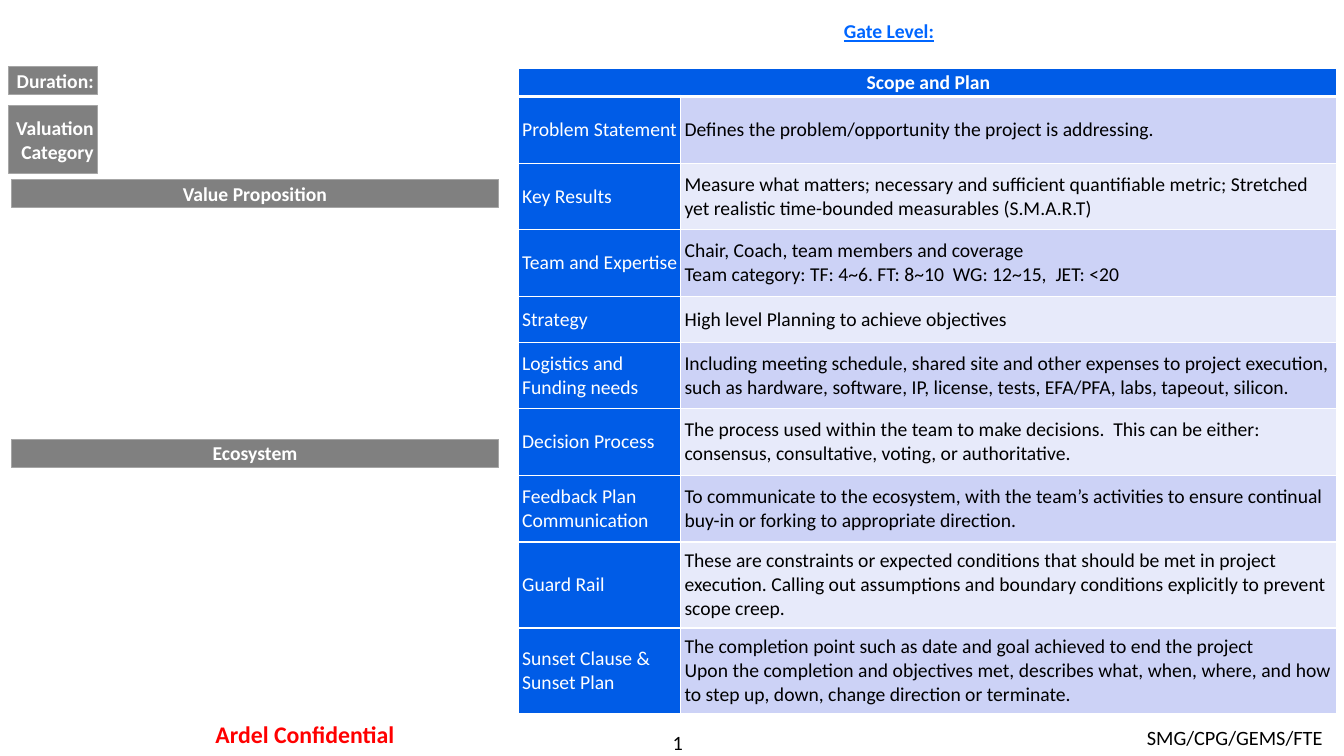
from dataclasses import dataclass

from lxml import etree
from pptx import Presentation
from pptx.dml.color import RGBColor
from pptx.enum.shapes import MSO_SHAPE
from pptx.enum.text import MSO_ANCHOR, MSO_AUTO_SIZE, PP_ALIGN
from pptx.oxml.ns import qn
from pptx.util import Pt

LEFT, CENTER, RIGHT = PP_ALIGN.LEFT, PP_ALIGN.CENTER, PP_ALIGN.RIGHT
TOP, MIDDLE = MSO_ANCHOR.TOP, MSO_ANCHOR.MIDDLE
RECTANGLE = MSO_SHAPE.RECTANGLE
NO_AUTOFIT = MSO_AUTO_SIZE.NONE
TITLE_ONLY = 5

FONT = "Calibri"
WHITE, BLACK, RED = "FFFFFF", "000000", "FF0000"
LINK_BLUE, TABLE_BLUE = "0066FF", "005CE7"
GREY, GREY_EDGE = "808080", "A6A6A6"
BANDS = ("CCD2F6", "E7EAFA")


@dataclass
class Label:
    text: str
    left: float
    top: float
    width: float
    height: float
    align: PP_ALIGN = CENTER
    size: float = 14
    color: str = WHITE
    bold: bool = True
    underline: bool = False
    inset_x: float = 2.9
    inset_y: float = 1.4


@dataclass
class PlanRow:
    topic: str
    detail: str
    height: float = 47.6


GATE_LEVEL = Label("Gate Level:", 599.8, 12.2, 72, 20, LEFT,
                   color=LINK_BLUE, underline=True)
PAGE_NUMBER = Label("", 400.3, 521.3, 167.8, 17.3, size=14.5, color=BLACK,
                    bold=False, inset_x=0, inset_y=0)
GREY_LABELS = [
    Label("Value Proposition", 7.9, 128.2, 348.5, 19.8),
    Label("Duration:", 5.8, 47.5, 64.1, 20, RIGHT),
    Label("Ecosystem", 7.9, 313.9, 348.5, 20),
    Label("Valuation Category", 5.8, 75.6, 64.1, 48.2, RIGHT, inset_y=7.2),
]
FOOTERS = [
    Label("SMG/CPG/GEMS/FTE", 635.8, 514.8, 316.1, 25.2, RIGHT, 14.5, BLACK,
          False, inset_x=7.2, inset_y=3.6),
    Label("Ardel Confidential", 111.6, 509.8, 212.4, 29.5, CENTER, 17, RED,
          inset_x=8.6, inset_y=4.3),
]
PLAN = [
    PlanRow("Problem Statement",
            "Defines the problem/opportunity the project is addressing."),
    PlanRow("Key Results",
            "Measure what matters; necessary and sufficient quantifiable metric; "
            "Stretched yet realistic time-bounded measurables (S.M.A.R.T)"),
    PlanRow("Team and Expertise",
            "Chair, Coach, team members and coverage\n"
            "Team category: TF: 4~6. FT: 8~10  WG: 12~15,  JET: <20"),
    PlanRow("Strategy", "High level Planning to achieve objectives", 32.6),
    PlanRow("Logistics and Funding needs",
            "Including meeting schedule, shared site and other expenses to project "
            "execution, such as hardware, software, IP, license, tests, EFA/PFA, "
            "labs, tapeout, silicon."),
    PlanRow("Decision Process",
            "The process used within the team to make decisions.  This can be "
            "either: consensus, consultative, voting, or authoritative."),
    PlanRow("Feedback Plan Communication",
            "To communicate to the ecosystem, with the team’s activities to ensure "
            "continual buy-in or forking to appropriate direction."),
    PlanRow("Guard Rail",
            "These are constraints or expected conditions that should be met in "
            "project execution. Calling out assumptions and boundary conditions "
            "explicitly to prevent scope creep.", 61.4),
    PlanRow("Sunset Clause & Sunset Plan",
            "The completion point such as date and goal achieved to end the project\n"
            "Upon the completion and objectives met, describes what, when, where, "
            "and how to step up, down, change direction or terminate.", 61.4),
]
TABLE_LEFT, TABLE_TOP, HEADER_HEIGHT = 370.1, 49, 20
COLUMN_WIDTHS = (116, 468.7)


def rgb(color: str) -> RGBColor:
    return RGBColor.from_string(color)


def set_all(target, values: dict) -> None:
    for name, value in values.items():
        setattr(target, name, value)


def format_text(frame, align: PP_ALIGN, size: float, color: str,
                bold: bool, underline: bool = False) -> None:
    for para in frame.paragraphs:
        para.alignment = align
        for span in para.runs:
            set_all(span.font, {"name": FONT, "size": Pt(size), "bold": bold,
                                "underline": underline})
            span.font.color.rgb = rgb(color)


def fill_label(box, label: Label) -> None:
    frame = box.text_frame
    frame.text = label.text
    set_all(frame, {
        "word_wrap": True, "auto_size": NO_AUTOFIT, "vertical_anchor": TOP,
        "margin_left": Pt(label.inset_x), "margin_right": Pt(label.inset_x),
        "margin_top": Pt(label.inset_y), "margin_bottom": Pt(label.inset_y)})
    format_text(frame, label.align, label.size, label.color, label.bold,
                label.underline)


def bounds(label: Label) -> tuple:
    return Pt(label.left), Pt(label.top), Pt(label.width), Pt(label.height)


def add_title(page, label: Label) -> None:
    title = page.shapes.title
    title.left, title.top, title.width, title.height = bounds(label)
    fill_label(title, label)


def add_text(page, label: Label):
    box = page.shapes.add_textbox(*bounds(label))
    fill_label(box, label)
    return box


def add_grey_label(page, label: Label) -> None:
    box = page.shapes.add_shape(RECTANGLE, *bounds(label))
    box.shadow.inherit = False
    box.fill.solid()
    box.fill.fore_color.rgb = rgb(GREY)
    box.line.color.rgb = rgb(GREY_EDGE)
    box.line.width = Pt(0.75)
    fill_label(box, label)


def add_page_number(page, label: Label) -> None:
    """Add a live slide-number field."""
    para = add_text(page, label).text_frame.paragraphs[0]
    span = para.add_run()
    span.text = "1"
    set_all(span.font, {"name": FONT, "size": Pt(label.size)})
    span.font.color.rgb = rgb(label.color)
    element = span._r
    element.tag = qn("a:fld")
    element.set("id", "{B6F15528-21DE-4FAA-801E-634DDDAF4B2B}")
    element.set("type", "slidenum")


def set_borders(cell, bottom: float) -> None:
    properties = cell._tc.get_or_add_tcPr()
    for side, width in (("L", 1), ("R", 1), ("T", 1), ("B", bottom)):
        line = etree.SubElement(properties, qn(f"a:ln{side}"), w=str(Pt(width)))
        fill = etree.SubElement(line, qn("a:solidFill"))
        etree.SubElement(fill, qn("a:srgbClr"), val=WHITE)


def fill_cell(cell, text: str, fill: str, color: str, align: PP_ALIGN = LEFT,
              bold: bool = False, bottom: float = 1) -> None:
    cell.text = text
    set_all(cell, {"vertical_anchor": MIDDLE, "margin_left": Pt(2.9),
                   "margin_right": Pt(1.4), "margin_top": Pt(1.4),
                   "margin_bottom": Pt(1.4)})
    format_text(cell.text_frame, align, 14, color, bold)
    set_borders(cell, bottom)
    cell.fill.solid()
    cell.fill.fore_color.rgb = rgb(fill)


def add_plan_table(page) -> None:
    heights = [HEADER_HEIGHT] + [row.height for row in PLAN]
    table = page.shapes.add_table(
        len(heights), len(COLUMN_WIDTHS), Pt(TABLE_LEFT), Pt(TABLE_TOP),
        Pt(sum(COLUMN_WIDTHS)), Pt(sum(heights))).table
    for column, width in zip(table.columns, COLUMN_WIDTHS):
        column.width = Pt(width)
    for row, height in zip(table.rows, heights):
        row.height = Pt(height)
    table.cell(0, 0).merge(table.cell(0, 1))
    for column, text in enumerate(("Scope and Plan", "")):
        fill_cell(table.cell(0, column), text, TABLE_BLUE, WHITE, CENTER, True, 3)
    for index, row in enumerate(PLAN):
        fill_cell(table.cell(index + 1, 0), row.topic, TABLE_BLUE, WHITE)
        fill_cell(table.cell(index + 1, 1), row.detail, BANDS[index % 2], BLACK)


def main() -> None:
    deck = Presentation()
    deck.slide_width, deck.slide_height = Pt(960), Pt(540)
    page = deck.slides.add_slide(deck.slide_layouts[TITLE_ONLY])
    add_title(page, GATE_LEVEL)
    add_page_number(page, PAGE_NUMBER)
    for label in FOOTERS:
        add_text(page, label)
    for label in GREY_LABELS:
        add_grey_label(page, label)
    add_plan_table(page)
    deck.save("out.pptx")


if __name__ == "__main__":
    main()
